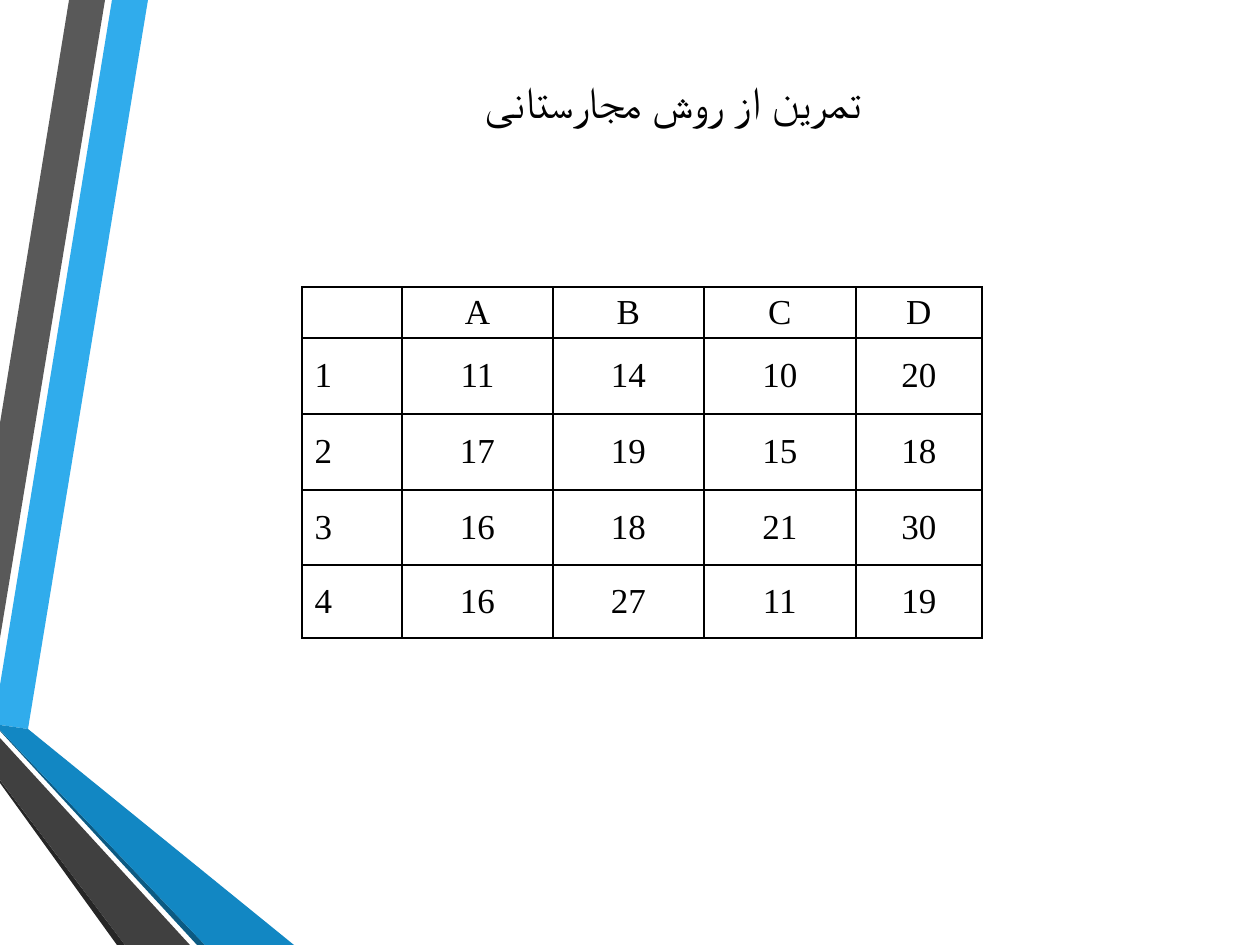
import dataclasses

import lxml.etree
import pptx
import pptx.dml.color
import pptx.enum.text
import pptx.oxml.ns
import pptx.util

PX = 914400 / 126
RGB = pptx.dml.color.RGBColor.from_string
ALIGN = pptx.enum.text.PP_ALIGN
MIDDLE = pptx.enum.text.MSO_ANCHOR.MIDDLE


@dataclasses.dataclass(frozen=True)
class Theme:
    paper: str = "FFFFFF"
    ink: str = "000000"
    sky: str = "30ACEC"
    blue: str = "1287C3"
    navy: str = "0C5A82"
    gray: str = "595959"
    charcoal: str = "404040"
    coal: str = "262626"
    title_font: str = "Cabin"
    table_font: str = "Times New Roman"
    title_size: float = 25.2
    table_size: int = 20
    border: int = 1


theme = Theme()


def px(length):
    return pptx.util.Emu(round(length * PX))


def style_text(para, font, size, align):
    para.alignment = align
    for span in para.runs:
        span.font.name = font
        span.font.size = pptx.util.Pt(size)
        span.font.color.rgb = RGB(theme.ink)


deck = pptx.Presentation()
deck.slide_width, deck.slide_height = px(1260), px(945)
page = deck.slides.add_slide(deck.slide_layouts[6])
page.background.fill.solid()
page.background.fill.fore_color.rgb = RGB(theme.paper)

# Folded ribbons along the left edge, back to front
ribbons = [
    (theme.sky, [(0, 685), (0, 725), (28, 729), (148, 0), (112, 0)]),
    (theme.gray, [(105, 0), (69, 0), (0, 423), (0, 638)]),
    (theme.coal, [(0, 780), (0, 783), (117, 945), (125, 945)]),
    (theme.navy, [(0, 730), (0, 731), (197, 945), (205, 945)]),
    (theme.blue, [(0, 730), (205, 945), (294, 945), (28, 729), (0, 725)]),
    (theme.charcoal, [(0, 780), (125, 945), (190, 945), (0, 738)]),
]
for color, points in ribbons:
    builder = page.shapes.build_freeform(*points[0], scale=PX)
    builder.add_line_segments(points[1:], close=True)
    ribbon = builder.convert_to_shape()
    ribbon.shadow.inherit = False
    ribbon.fill.solid()
    ribbon.fill.fore_color.rgb = RGB(color)
    ribbon.line.fill.background()

# Title
title = page.shapes.add_textbox(px(215), px(71), px(916), px(59))
title.fill.solid()
title.fill.fore_color.rgb = RGB(theme.paper)
frame = title.text_frame
frame.word_wrap = True
frame.vertical_anchor = MIDDLE
frame.text = "تمرین از روش مجارستانی"
para = frame.paragraphs[0]
style_text(para, theme.title_font, theme.title_size, ALIGN.CENTER)
para._p.get_or_add_pPr().set("rtl", "1")

# Cost table
rows = [
    ["", "A", "B", "C", "D"],
    ["1", "11", "14", "10", "20"],
    ["2", "17", "19", "15", "18"],
    ["3", "16", "18", "21", "30"],
    ["4", "16", "27", "11", "19"],
]
widths = [100, 151, 151, 152, 126]
heights = [51, 76, 76, 75, 73]
table = page.shapes.add_table(
    len(rows), len(widths), px(302), px(287), px(sum(widths)), px(sum(heights))
).table
table.first_row = table.horz_banding = False
for column, width in zip(table.columns, widths):
    column.width = px(width)
for row, height, values in zip(table.rows, heights, rows):
    row.height = px(height)
    for index, (cell, value) in enumerate(zip(row.cells, values)):
        cell.text = value
        cell.vertical_anchor = MIDDLE
        cell.margin_top = cell.margin_bottom = px(3)
        style_text(cell.text_frame.paragraphs[0], theme.table_font,
                   theme.table_size, ALIGN.CENTER if index else ALIGN.LEFT)
        properties = cell._tc.get_or_add_tcPr()
        for side in ("a:lnL", "a:lnR", "a:lnT", "a:lnB"):
            edge = lxml.etree.SubElement(properties, pptx.oxml.ns.qn(side),
                                         w=str(pptx.util.Pt(theme.border)))
            paint = lxml.etree.SubElement(edge, pptx.oxml.ns.qn("a:solidFill"))
            lxml.etree.SubElement(paint, pptx.oxml.ns.qn("a:srgbClr"), val=theme.ink)
        cell.fill.background()

deck.save("out.pptx")
